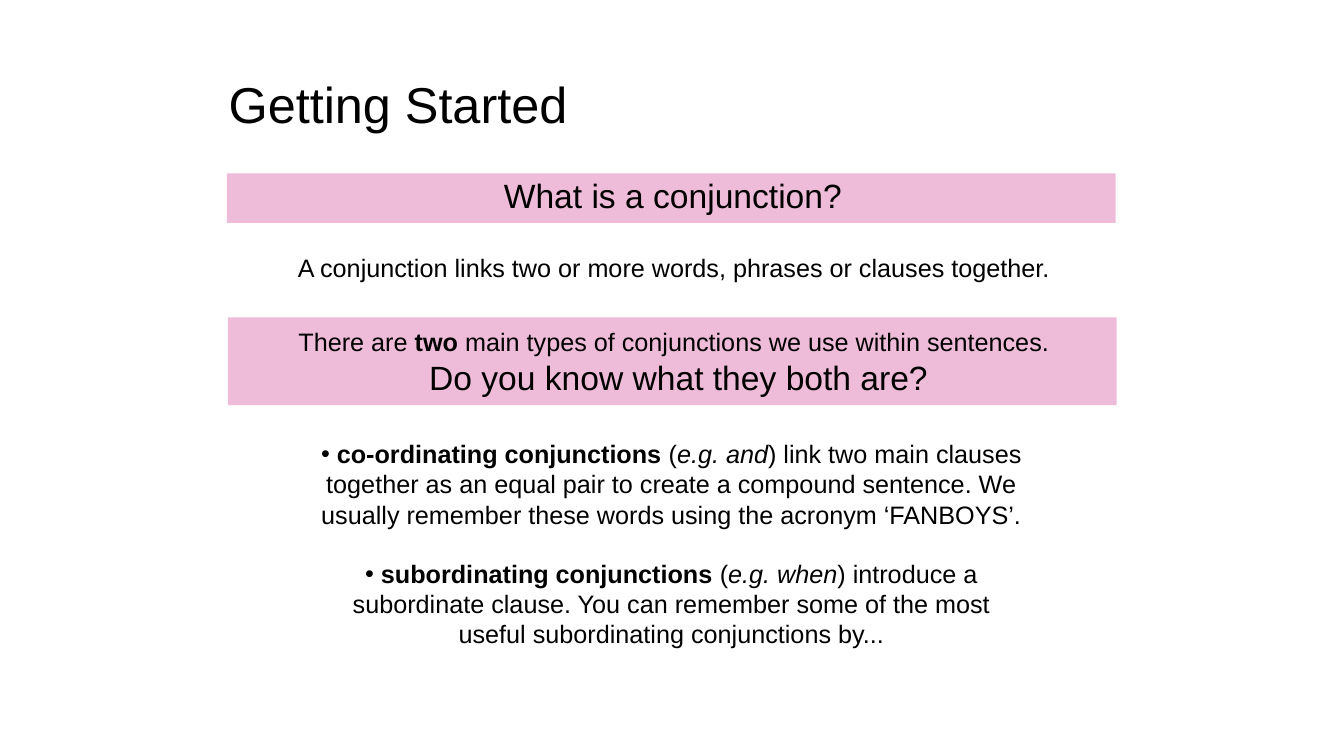
from dataclasses import dataclass

from lxml import etree
from pptx import Presentation
from pptx.dml.color import RGBColor
from pptx.enum import shapes, text
from pptx.oxml import ns
from pptx.slide import Slide
from pptx.util import Pt

BLACK = RGBColor(0x00, 0x00, 0x00)
PINK = RGBColor(0xEE, 0xBC, 0xD9)
FONT = "Arial"


@dataclass(frozen=True)
class Area:
    left: float
    top: float
    width: float
    height: float

    def lengths(self) -> tuple[Pt, Pt, Pt, Pt]:
        return Pt(self.left), Pt(self.top), Pt(self.width), Pt(self.height)


@dataclass(frozen=True)
class Phrase:
    words: str
    bold: bool = False
    italic: bool = False


@dataclass(frozen=True)
class Line:
    phrases: tuple[Phrase, ...]
    size: float = 18
    bulleted: bool = False
    space_before: float = 0
    spacing: float = 1.0
    align: text.PP_ALIGN = text.PP_ALIGN.CENTER


@dataclass(frozen=True)
class Passage:
    area: Area
    lines: tuple[Line, ...]
    side_inset: float = 0
    end_inset: float = 5.76
    anchor: text.MSO_ANCHOR = text.MSO_ANCHOR.TOP


BANDS = (Area(162, 123.84, 635, 35.28), Area(162.7, 226.8, 635, 62.64))

PASSAGES = (
    Passage(
        Area(156.24, 37.44, 647.28, 78.48),
        (Line((Phrase("Getting Started"),), 36, spacing=0.9, align=text.PP_ALIGN.LEFT),),
        side_inset=7.2,
        end_inset=3.6,
        anchor=text.MSO_ANCHOR.MIDDLE,
    ),
    Passage(
        Area(180, 119.52, 601.2, 40.32),
        (Line((Phrase("What is a conjunction?"),), 24),),
    ),
    Passage(
        Area(180.72, 174.24, 601.2, 33.12),
        (Line((Phrase("A conjunction links two or more words, phrases or clauses together."),)),),
    ),
    Passage(
        Area(180.72, 227.52, 601.2, 62.64),
        (
            Line((
                Phrase("There are "),
                Phrase("two", bold=True),
                Phrase(" main types of conjunctions we use within sentences."),
            )),
            Line((Phrase(" Do you know what they both are?"),), 24),
        ),
    ),
    Passage(
        Area(226.8, 307.44, 505.44, 164.16),
        (
            Line(
                (
                    Phrase(" co-ordinating conjunctions ", bold=True),
                    Phrase("("),
                    Phrase("e.g. and", italic=True),
                    Phrase(
                        ") link two main clauses together as an equal pair to create a "
                        "compound sentence. We usually remember these words using the "
                        "acronym ‘FANBOYS’."
                    ),
                ),
                bulleted=True,
            ),
            Line(
                (
                    Phrase(" "),
                    Phrase("subordinating conjunctions ", bold=True),
                    Phrase("("),
                    Phrase("e.g. when", italic=True),
                    Phrase(
                        ") introduce a subordinate clause. You can remember some of the "
                        "most useful subordinating conjunctions by..."
                    ),
                ),
                bulleted=True,
                space_before=20.7,
            ),
        ),
    ),
)


def draw_band(slide: Slide, area: Area) -> None:
    band = slide.shapes.add_shape(shapes.MSO_SHAPE.RECTANGLE, *area.lengths())
    band.shadow.inherit = False
    band.fill.solid()
    band.fill.fore_color.rgb = PINK
    band.line.fill.background()


def draw_passage(slide: Slide, passage: Passage) -> None:
    frame = slide.shapes.add_textbox(*passage.area.lengths()).text_frame
    frame.word_wrap = True
    frame.vertical_anchor = passage.anchor
    frame.margin_left = frame.margin_right = Pt(passage.side_inset)
    frame.margin_top = frame.margin_bottom = Pt(passage.end_inset)
    for index, line in enumerate(passage.lines):
        paragraph = frame.add_paragraph() if index else frame.paragraphs[0]
        paragraph.alignment = line.align
        paragraph.line_spacing = line.spacing
        paragraph.space_before = Pt(line.space_before)
        paragraph.font.name = FONT
        paragraph.font.size = Pt(line.size)
        paragraph.font.color.rgb = BLACK
        for phrase in line.phrases:
            run = paragraph.add_run()
            run.text = phrase.words
            if phrase.bold:
                run.font.bold = True
            if phrase.italic:
                run.font.italic = True
        if line.bulleted:
            properties = paragraph.font._element.getparent()
            bullet_font = etree.Element(ns.qn("a:buFont"), typeface=FONT)
            bullet = etree.Element(ns.qn("a:buChar"), char="•")
            for element in (bullet_font, bullet):
                paragraph.font._element.addprevious(element)
            properties.set("marL", "0")
            properties.set("indent", "0")


def main() -> None:
    deck = Presentation()
    deck.slide_width, deck.slide_height = Pt(960), Pt(540)
    slide = deck.slides.add_slide(deck.slide_layouts[6])
    for band in BANDS:
        draw_band(slide, band)
    for passage in PASSAGES:
        draw_passage(slide, passage)
    deck.save("out.pptx")


if __name__ == "__main__":
    main()
